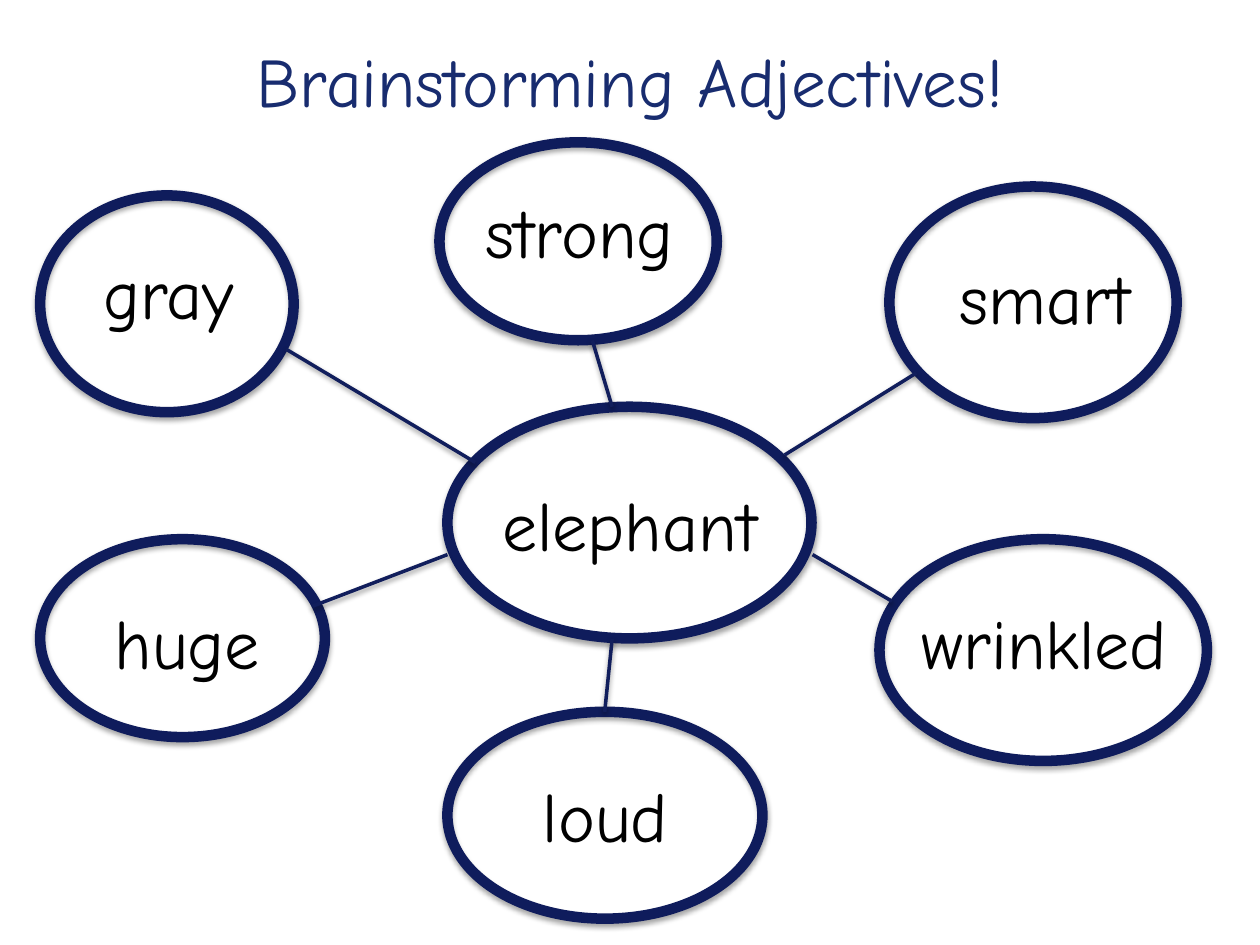
from lxml import etree
from pptx import Presentation
from pptx.dml.color import RGBColor
from pptx.enum.shapes import MSO_CONNECTOR, MSO_SHAPE
from pptx.enum.text import MSO_ANCHOR, MSO_AUTO_SIZE, PP_ALIGN
from pptx.oxml.ns import qn
from pptx.util import Cm, Pt

OVAL = MSO_SHAPE.OVAL
STRAIGHT = MSO_CONNECTOR.STRAIGHT
CENTER = PP_ALIGN.CENTER
TOP = MSO_ANCHOR.TOP
GROW = MSO_AUTO_SIZE.SHAPE_TO_FIT_TEXT
FONT = "Comic Neue"
LABEL_HEIGHT = 1.96

# Content, in cm
TITLE = "Brainstorming Adjectives!"
# word, oval (left, top, width, height), label (left, top, width)
BUBBLES = [
    ("elephant", (9.02, 8.2, 7.34, 4.67), (7.87, 9.58, 9.65)),
    ("strong", (8.86, 2.87, 5.59, 3.99), (8.66, 3.68, 6.05)),
    ("gray", (0.81, 3.94, 5.11, 4.37), (1.07, 4.9, 4.67)),
    ("wrinkled", (17.73, 10.87, 6.6, 4.47), (17.78, 11.96, 6.55)),
    ("huge", (0.81, 10.87, 5.74, 3.99), (1.4, 11.96, 4.75)),
    ("loud", (9.02, 14.35, 6.35, 4.17), (9.93, 15.44, 4.55)),
    ("smart", (17.93, 3.76, 5.79, 4.67), (17.12, 5, 7.9)),
]
# start x, start y, end x, end y
SPOKES = [
    (5.77, 7.04, 9.58, 9.32),
    (18.47, 7.52, 15.82, 9.17),
    (11.94, 6.86, 12.34, 8.2),
    (12.34, 12.88, 12.19, 14.35),
    (6.3, 12.22, 9.02, 11.18),
    (16.38, 11.18, 17.98, 12.12),
]


def color(hex_value):
    return RGBColor.from_string(hex_value)


def lengths(values):
    return [Cm(value) for value in values]


def style_outline(shape, hex_value, width, opacity, distance):
    """Set the line, then a soft shadow straight below it."""
    shape.line.color.rgb = color(hex_value)
    shape.line.width = Pt(width)
    effects = etree.SubElement(shape._element.spPr, qn("a:effectLst"))
    shadow = etree.SubElement(
        effects, qn("a:outerShdw"), blurRad=str(Pt(3.1)),
        dist=str(Pt(distance)), dir=str(90 * 60000), rotWithShape="0")
    black = etree.SubElement(shadow, qn("a:srgbClr"), val="000000")
    etree.SubElement(black, qn("a:alpha"), val=str(opacity * 1000))


def write(shape, text, size, hex_value):
    shape.text_frame.text = text
    shape.text_frame.word_wrap = True
    paragraph = shape.text_frame.paragraphs[0]
    paragraph.alignment = CENTER
    font = paragraph.runs[0].font
    font.name = FONT
    font.size = Pt(size)
    font.color.rgb = color(hex_value)


presentation = Presentation()
presentation.slide_width = Cm(25.4)
presentation.slide_height = Cm(19.05)
slide = presentation.slides.add_slide(presentation.slide_layouts[5])
shapes = slide.shapes

# Title
title = shapes.title
title.left, title.top, title.width, title.height = lengths(
    (1.27, 0.76, 22.86, 3.18))
write(title, TITLE, 39.6, "182C6F")
title.text_frame.auto_size = MSO_AUTO_SIZE.NONE
title.text_frame.vertical_anchor = TOP
title.text_frame.margin_top = 0

# Ovals with their words
for word, oval_box, label_box in BUBBLES:
    oval = shapes.add_shape(OVAL, *lengths(oval_box))
    oval.fill.background()
    style_outline(oval, "0F1C5C", 6, 35, 1.8)
    label = shapes.add_textbox(*lengths((*label_box, LABEL_HEIGHT)))
    write(label, word, 40, "000000")
    label.text_frame.auto_size = GROW

# Lines from the center to each adjective
for ends in SPOKES:
    spoke = shapes.add_connector(STRAIGHT, *lengths(ends))
    style_outline(spoke, "111E5C", 2, 38, 1.6)

presentation.save("out.pptx")
